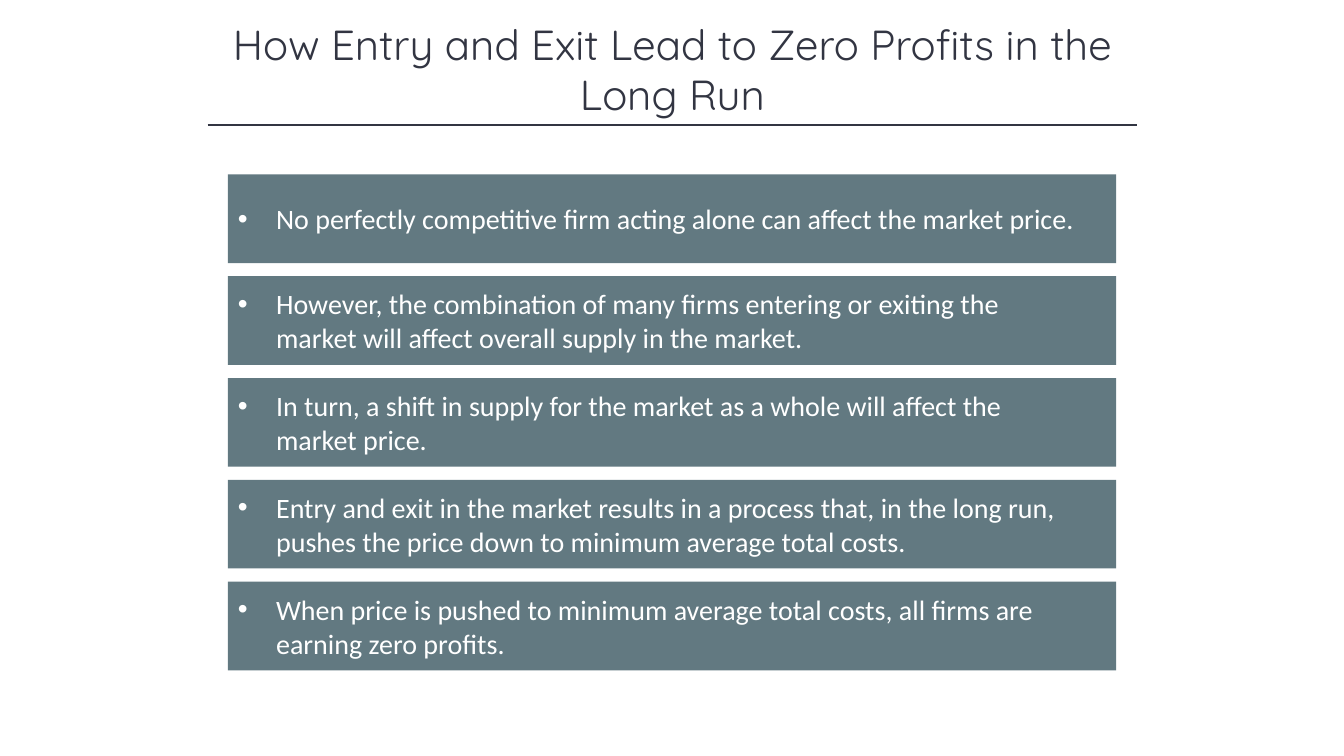
from pptx import Presentation
from pptx.dml.color import RGBColor
from pptx.enum.shapes import MSO_CONNECTOR, MSO_SHAPE
from pptx.enum.text import MSO_ANCHOR as ANCHOR, PP_ALIGN as ALIGN
from pptx.oxml.ns import qn
from pptx.util import Inches, Pt

INK = RGBColor(0x32, 0x35, 0x42)
SLATE = RGBColor(0x62, 0x79, 0x81)
WHITE = RGBColor(0xFF, 0xFF, 0xFF)

# Card column: left edge, width, first top, height and row pitch
CARD_LEFT, CARD_WIDTH = Inches(2.26), Inches(8.81)
CARD_TOP, CARD_HEIGHT, ROW_PITCH = Inches(1.73), Inches(0.88), Inches(1.01)
BULLET_INDENT = Inches(0.38)

TITLE = "How Entry and Exit Lead to Zero Profits in the Long Run"
POINTS = [
    "No perfectly competitive firm acting alone can affect the market price.",
    "However, the combination of many firms entering or exiting the market "
    "will affect overall supply in the market.",
    "In turn, a shift in supply for the market as a whole will affect the "
    "market price.",
    "Entry and exit in the market results in a process that, in the long run, "
    "pushes the price down to minimum average total costs.",
    "When price is pushed to minimum average total costs, all firms are "
    "earning zero profits.",
]


def set_text(tf, text, font, size, color, align):
    tf.word_wrap = True
    tf.text = text
    p = tf.paragraphs[0]
    p.alignment = align
    r = p.runs[0]
    r.font.name = font
    r.font.size = Pt(size)
    r.font.color.rgb = color
    return p


def add_bullet(p):
    pPr = p._p.get_or_add_pPr()
    pPr.set("marL", str(BULLET_INDENT))
    pPr.set("indent", str(-BULLET_INDENT))
    bu_font = pPr.makeelement(qn("a:buFont"), {"typeface": "Arial"})
    bu_char = pPr.makeelement(qn("a:buChar"), {"char": "•"})
    pPr.extend([bu_font, bu_char])


def add_title(s, text):
    sp = s.shapes.add_textbox(Inches(1.67), Inches(0.13), Inches(10), Inches(1.11))
    set_text(sp.text_frame, text, "Quicksand", 30, INK, ALIGN.CENTER)


def add_rule(s, left, right, y):
    line = s.shapes.add_connector(MSO_CONNECTOR.STRAIGHT, left, y, right, y)
    line.line.color.rgb = INK
    line.line.width = Pt(1)
    spPr = line._element.spPr
    spPr.append(spPr.makeelement(qn("a:effectLst"), {}))


def add_card(s, row, text):
    sp = s.shapes.add_shape(MSO_SHAPE.RECTANGLE, CARD_LEFT,
                            CARD_TOP + row * ROW_PITCH, CARD_WIDTH, CARD_HEIGHT)
    sp.shadow.inherit = False
    sp.fill.solid()
    sp.fill.fore_color.rgb = SLATE
    sp.line.fill.background()
    tf = sp.text_frame
    tf.vertical_anchor = ANCHOR.MIDDLE
    tf.margin_right = Inches(0.37)
    add_bullet(set_text(tf, text, "Calibri", 20, WHITE, ALIGN.LEFT))


def main():
    prs = Presentation()
    prs.slide_width, prs.slide_height = Inches(13.33), Inches(7.5)
    s = prs.slides.add_slide(prs.slide_layouts[6])

    # Heading
    add_title(s, TITLE)
    add_rule(s, Inches(2.06), Inches(11.28), Inches(1.24))

    # Stacked cards
    for row, text in enumerate(POINTS):
        add_card(s, row, text)

    prs.save("out.pptx")


if __name__ == "__main__":
    main()
